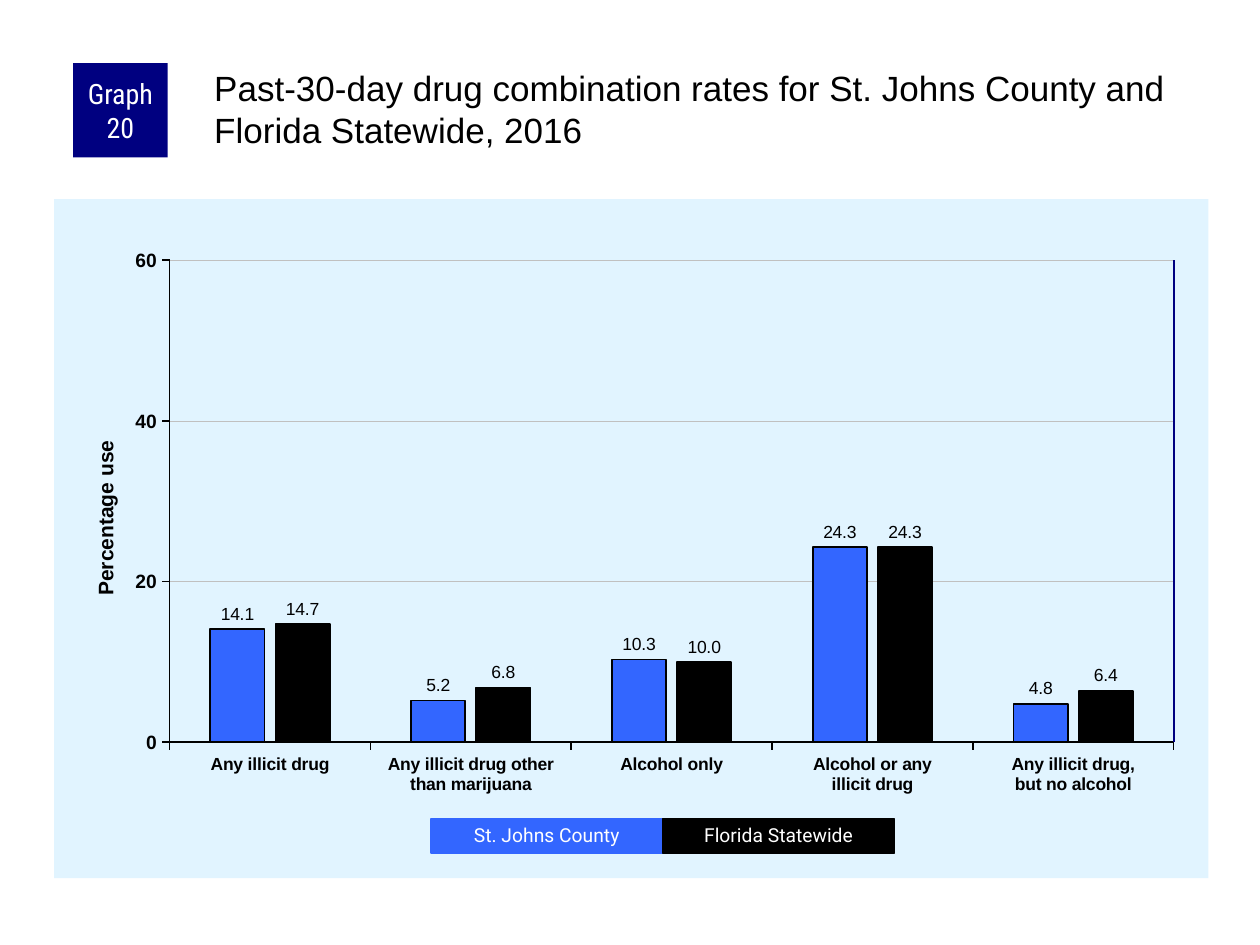
from lxml.etree import SubElement
from pptx import Presentation
from pptx.chart.data import CategoryChartData
from pptx.dml.color import RGBColor
from pptx.enum.chart import XL_CHART_TYPE, XL_LABEL_POSITION, XL_TICK_MARK
from pptx.enum.shapes import MSO_CONNECTOR, MSO_SHAPE
from pptx.enum.text import MSO_ANCHOR, MSO_AUTO_SIZE, PP_ALIGN
from pptx.oxml import parse_xml
from pptx.oxml.ns import nsdecls, qn
from pptx.util import Inches, Pt

COLORS = {"navy": "000080", "blue": "3366FF", "black": "000000",
          "white": "FFFFFF", "panel": "E1F4FF", "grid": "C0C0C0"}
TITLE = ("Past-30-day drug combination rates for St. Johns County "
         "and Florida Statewide, 2016")
CATEGORIES = ["Any illicit drug", "Any illicit drug other than marijuana",
              "Alcohol only", "Alcohol or any\nillicit drug",
              "Any illicit drug,\nbut no alcohol"]
SERIES = [("St. Johns County", "blue", (14.1, 5.2, 10.3, 24.3, 4.8)),
          ("Florida Statewide", "black", (14.7, 6.8, 10.0, 24.3, 6.4))]
CHART = (0.43, 1.58, 9.16, 5.39)
PLOT = {"x": 0.1, "y": 0.09, "w": 0.87, "h": 0.71}
KEY_LEFT, KEY_TOP, KEY_W, KEY_H = 3.42, 6.5, 1.84, 0.27


def rgb(name):
    return RGBColor.from_string(COLORS[name])


def style_font(font, size, color="black", bold=False, name="Arial"):
    font.size, font.bold, font.name = Pt(size), bold, name
    font.color.rgb = rgb(color)


def style_line(line, color, width):
    line.color.rgb = rgb(color)
    line.width = Pt(width)


def add_text(tf, text, size, color="black", font="Arial", bold=False,
             align=PP_ALIGN.LEFT, anchor=MSO_ANCHOR.TOP,
             insets=(0.1, 0.05, 0.1, 0.05), spacing=None):
    tf.word_wrap = True
    tf.auto_size = MSO_AUTO_SIZE.NONE
    tf.vertical_anchor = anchor
    tf.margin_left, tf.margin_top, tf.margin_right, tf.margin_bottom = map(Inches, insets)
    p = tf.paragraphs[0]
    p.alignment, p.line_spacing = align, spacing
    r = p.add_run()
    r.text = text
    style_font(r.font, size, color, bold, font)


def add_box(s, box, text, size, fill, **fmt):
    sp = s.shapes.add_shape(MSO_SHAPE.RECTANGLE, *map(Inches, box))
    sp.shadow.inherit = False
    sp.fill.solid()
    sp.fill.fore_color.rgb = rgb(fill)
    sp.line.fill.background()
    add_text(sp.text_frame, text, size, "white", align=PP_ALIGN.CENTER,
             anchor=MSO_ANCHOR.MIDDLE, **fmt)
    return sp


def set_layout(parent, index, values, inner=False):
    for old in parent.findall(qn("c:layout")):
        parent.remove(old)
    layout = parse_xml(f'<c:layout {nsdecls("c")}><c:manualLayout/></c:layout>')
    entries = [("layoutTarget", "inner")] if inner else []
    entries += [(f"{k}Mode", "edge") for k in "xy"] + list(values.items())
    for tag, value in entries:
        SubElement(layout[0], qn(f"c:{tag}"), val=str(value))
    parent.insert(index, layout)


def add_rates_chart(s):
    data = CategoryChartData(number_format="0.0")
    data.categories = CATEGORIES
    for name, _, values in SERIES:
        data.add_series(name, values)
    chart = s.shapes.add_chart(XL_CHART_TYPE.COLUMN_CLUSTERED,
                               *map(Inches, CHART), data).chart
    chart.has_legend = chart.has_title = False
    style_font(chart.font, 11.5)
    cs = chart.element
    cs.find(qn("c:chart")).addnext(parse_xml(
        f'<c:spPr {nsdecls("c", "a")}><a:solidFill><a:srgbClr val="{COLORS["panel"]}"/>'
        '</a:solidFill><a:ln><a:noFill/></a:ln></c:spPr>'))
    set_layout(cs.find(".//" + qn("c:plotArea")), 0, PLOT, inner=True)

    plot = chart.plots[0]
    plot.gap_width, plot.overlap, plot.vary_by_categories = 150, -20, False
    for series, (_, color, _) in zip(plot.series, SERIES):
        series.format.fill.solid()
        series.format.fill.fore_color.rgb = rgb(color)
        style_line(series.format.line, "black", 1)
        labels = series.data_labels
        labels.show_value = True
        labels.number_format, labels.number_format_is_linked = "0.0", False
        labels.position = XL_LABEL_POSITION.OUTSIDE_END
        style_font(labels.font, 10)

    cat, val = chart.category_axis, chart.value_axis
    for axis, size in ((cat, 10), (val, 11)):
        axis.major_tick_mark = XL_TICK_MARK.OUTSIDE
        axis.minor_tick_mark = XL_TICK_MARK.NONE
        style_font(axis.tick_labels.font, size, bold=True)
        style_line(axis.format.line, "black", 1)
    val.minimum_scale, val.maximum_scale, val.major_unit = 0, 60, 20
    val.tick_labels.number_format, val.tick_labels.number_format_is_linked = "0", False
    val.has_major_gridlines = True
    style_line(val.major_gridlines.format.line, "grid", 0.25)
    val.has_title = True
    p = val.axis_title.text_frame.paragraphs[0]
    r = p.add_run()
    r.text = "Percentage use"
    style_font(r.font, 12, bold=True)
    title = cs.find(".//" + qn("c:valAx")).find(qn("c:title"))
    title.find(".//" + qn("a:bodyPr")).set("rot", "-5400000")
    set_layout(title, 1, {"x": 0.03, "y": 0.35})


def add_right_edge(s):
    left, top, width, height = CHART
    x = left + width * (PLOT["x"] + PLOT["w"])
    y = top + height * PLOT["y"]
    edge = s.shapes.add_connector(MSO_CONNECTOR.STRAIGHT, Inches(x), Inches(y),
                                  Inches(x), Inches(y + height * PLOT["h"]))
    style_line(edge.line, "navy", 1)
    SubElement(edge.element.spPr, qn("a:effectLst"))


def main():
    prs = Presentation()
    prs.slide_width, prs.slide_height = Inches(10), Inches(7.5)
    s = prs.slides.add_slide(prs.slide_layouts[5])
    add_rates_chart(s)
    add_right_edge(s)
    add_box(s, (0.58, 0.5, 0.75, 0.75), "Graph 20", 16, "navy",
            font="Roboto Condensed", insets=(0.05, 0, 0.05, 0))
    title = s.shapes.title
    title.left, title.top, title.width, title.height = map(Inches, (1.67, 0.5, 7.92, 0.83))
    add_text(title.text_frame, TITLE, 20, insets=(0.03, 0.03, 0, 0))
    for i, (name, color, _) in enumerate(SERIES):
        key = add_box(s, (KEY_LEFT + i * KEY_W, KEY_TOP, KEY_W, KEY_H), name, 11,
                      color, font="Roboto", spacing=0.9)
        style_line(key.line, color, 0.75)
    prs.save("out.pptx")


if __name__ == "__main__":
    main()
